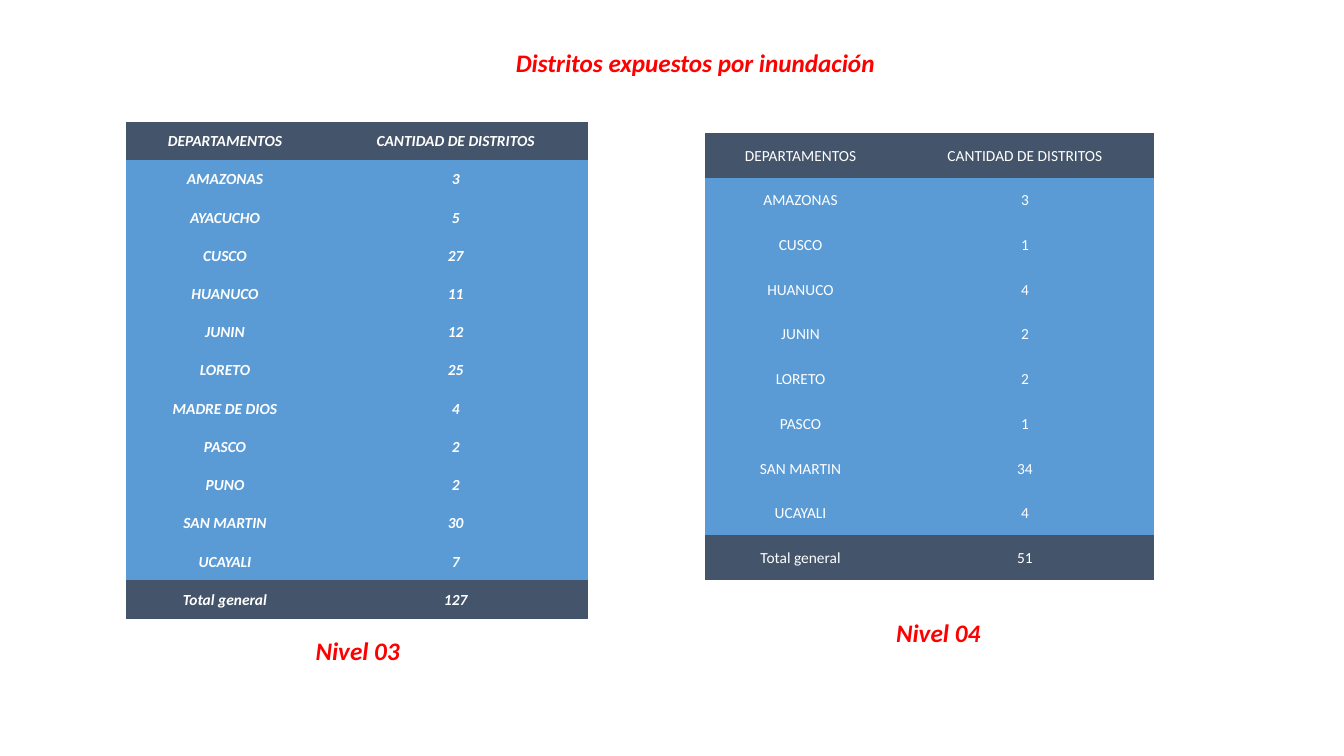
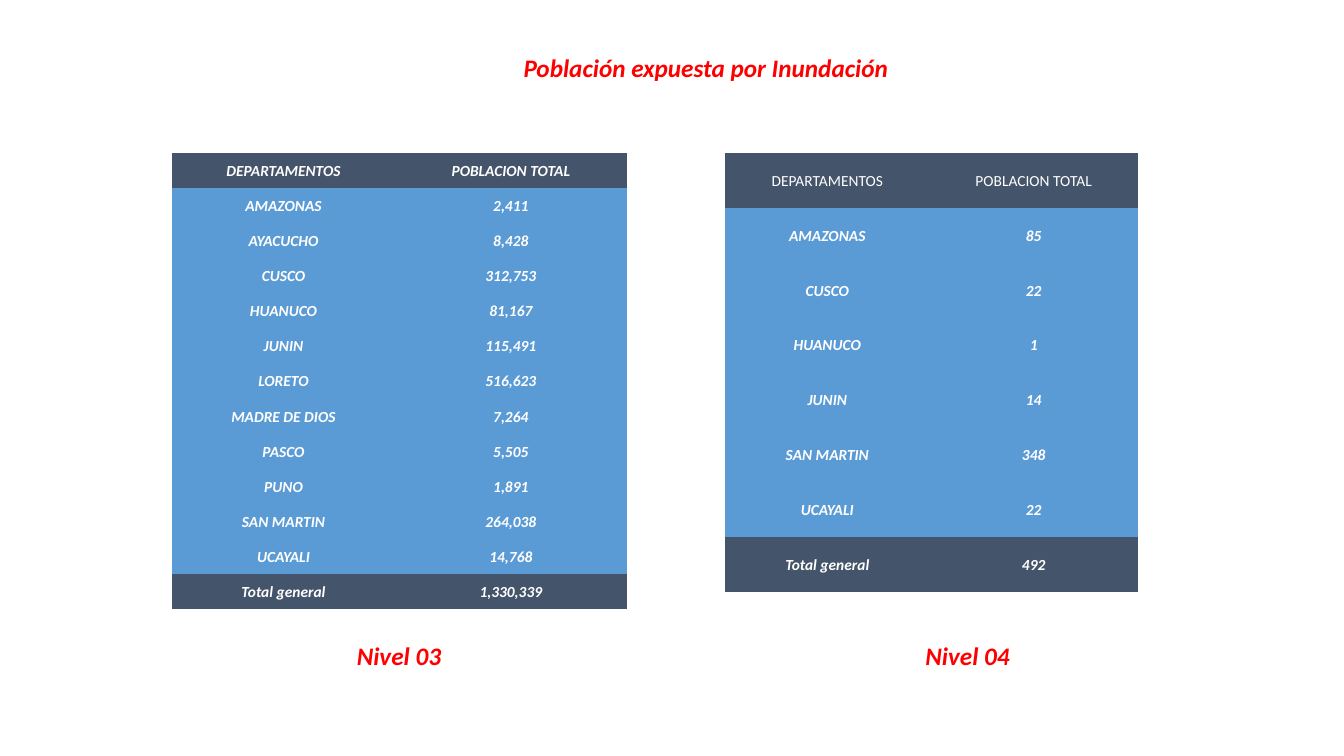
from dataclasses import dataclass

from pptx import Presentation
from pptx import util as u
from pptx.dml.color import RGBColor
from pptx.enum import text


@dataclass(frozen=True)
class Theme:
    font: str = "Calibri"
    red: str = "FF0000"
    white: str = "FFFFFF"
    dark: str = "44546A"
    blue: str = "5B9BD5"
    title: int = 18
    cell: int = 11
    label: float = 1.03
    inset: float = 0.02
    grid: str = "{2D5ABB26-0587-4C30-8999-92F81FD0307C}"


class Deck:
    def __init__(self, theme):
        self.theme = theme
        self.file = Presentation()
        self.file.slide_width = u.Cm(33.87)
        self.file.slide_height = u.Cm(19.05)
        self.slide = None

    def page(self):
        self.slide = self.file.slides.add_slide(self.file.slide_layouts[6])

    def style(self, para, size, color, strong):
        para.alignment = text.PP_ALIGN.CENTER
        font = para.font
        font.name = self.theme.font
        font.size = u.Pt(size)
        font.bold = font.italic = strong
        font.color.rgb = RGBColor.from_string(color)

    def label(self, words, left, top, width, wrap=True):
        box = self.slide.shapes.add_textbox(
            u.Cm(left), u.Cm(top), u.Cm(width), u.Cm(self.theme.label))
        frame = box.text_frame
        frame.word_wrap = wrap
        frame.auto_size = text.MSO_AUTO_SIZE.SHAPE_TO_FIT_TEXT
        para = frame.paragraphs[0]
        para.text = words
        self.style(para, self.theme.title, self.theme.red, True)

    def cell(self, cell, words, fill, strong):
        cell.fill.solid()
        cell.fill.fore_color.rgb = RGBColor.from_string(fill)
        cell.vertical_anchor = text.MSO_ANCHOR.MIDDLE
        cell.margin_left = cell.margin_right = u.Cm(self.theme.inset)
        cell.margin_top = u.Cm(self.theme.inset)
        cell.margin_bottom = 0
        para = cell.text_frame.paragraphs[0]
        para.text = words
        self.style(para, self.theme.cell, self.theme.white, strong)

    def table(self, rows, left, top, cols, height, head=True, body=True):
        shape = self.slide.shapes.add_table(
            len(rows), len(cols), u.Cm(left), u.Cm(top),
            u.Cm(sum(cols)), u.Cm(height))
        shape.element.xpath(".//a:tableStyleId")[0].text = self.theme.grid
        table = shape.table
        table.first_row = table.horz_banding = False
        for col, width in zip(table.columns, cols):
            col.width = u.Cm(width)
        last = len(rows) - 1
        for i, row in enumerate(rows):
            table.rows[i].height = u.Cm(height / len(rows))
            fill = self.theme.dark if i in (0, last) else self.theme.blue
            for j, words in enumerate(row):
                self.cell(table.cell(i, j), words, fill, body if i else head)


def pair(head, names, values):
    first = ["DEPARTAMENTOS", *names, "Total general"]
    return list(zip(first, [head, *values.split()]))


def main():
    deck = Deck(Theme())
    wide = ["AMAZONAS", "AYACUCHO", "CUSCO", "HUANUCO", "JUNIN", "LORETO",
            "MADRE DE DIOS", "PASCO", "PUNO", "SAN MARTIN", "UCAYALI"]
    some = [n for n in wide if n not in ("AYACUCHO", "MADRE DE DIOS", "PUNO")]
    few = [n for n in some if n not in ("LORETO", "PASCO")]

    deck.page()
    deck.label("Distritos expuestos por inundación", 12.7, 1.07, 9.65, False)
    deck.label("Nivel 03", 7.49, 15.88, 3.05)
    deck.label("Nivel 04", 22.12, 15.44, 3.05)
    head = "CANTIDAD DE DISTRITOS"
    deck.table(pair(head, wide, "3 5 27 11 12 25 4 2 2 30 7 127"),
               3.18, 3.07, (4.98, 6.65), 12.53)
    deck.table(pair(head, some, "3 1 4 2 2 1 34 4 51"),
               17.76, 3.35, (4.83, 6.48), 11.28, False, False)

    deck.page()
    deck.label("Población expuesta por Inundación", 12.9, 1.19, 9.78, False)
    deck.label("Nivel 03", 8.66, 16, 2.79)
    deck.label("Nivel 04", 22.99, 16, 2.79)
    head = "POBLACION TOTAL"
    deck.table(pair(head, wide, "2,411 8,428 312,753 81,167 115,491 516,623 "
                    "7,264 5,505 1,891 264,038 14,768 1,330,339"),
               4.33, 3.86, (5.63, 5.83), 11.5)
    deck.table(pair(head, few, "85 22 1 14 348 22 492"),
               18.27, 3.86, (5.16, 5.24), 11.06, False)

    deck.file.save("out.pptx")


if __name__ == "__main__":
    main()
